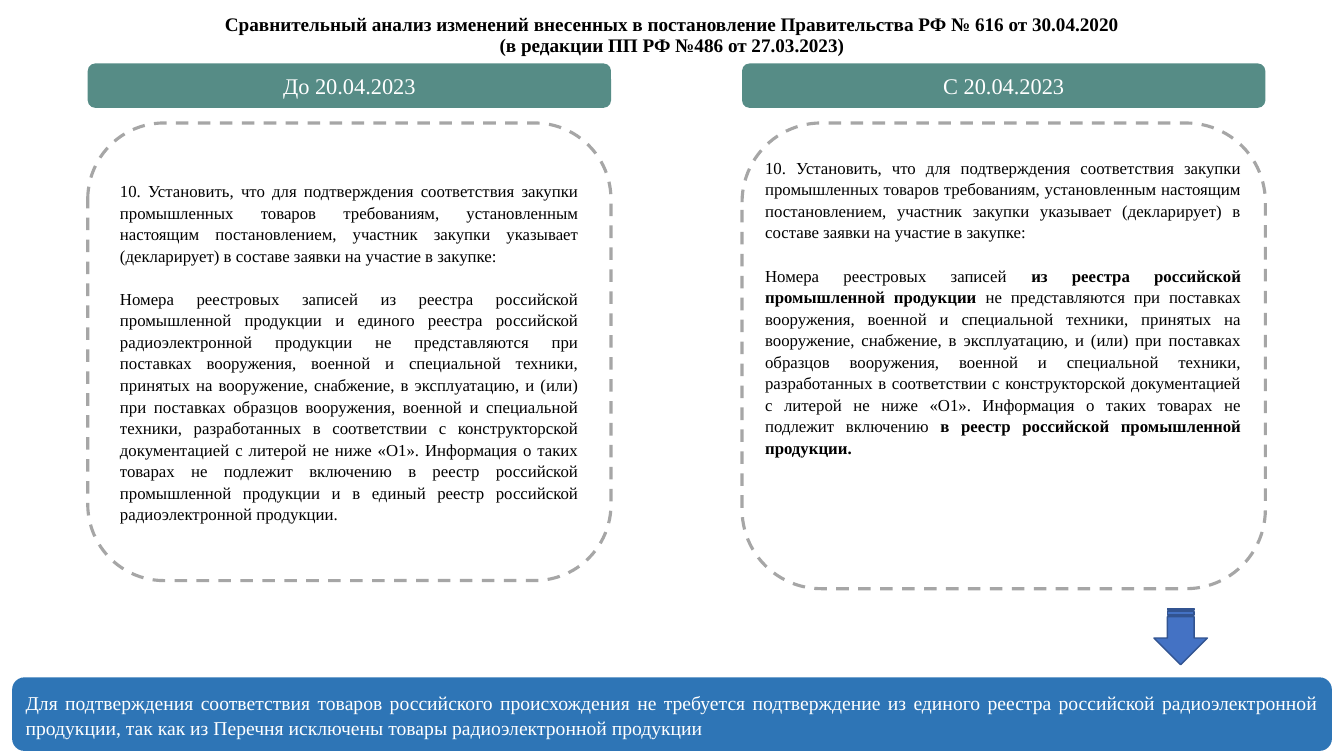
from pptx import Presentation
from pptx.dml.color import RGBColor
from pptx.enum.dml import MSO_LINE
from pptx.enum.shapes import MSO_SHAPE
from pptx.enum.text import MSO_ANCHOR, PP_ALIGN
from pptx.util import Inches, Pt

ROUNDED = MSO_SHAPE.ROUNDED_RECTANGLE
STRIPED_ARROW = MSO_SHAPE.STRIPED_RIGHT_ARROW
DASH = MSO_LINE.DASH
TOP, MIDDLE, BOTTOM = MSO_ANCHOR.TOP, MSO_ANCHOR.MIDDLE, MSO_ANCHOR.BOTTOM
CENTER, JUSTIFY = PP_ALIGN.CENTER, PP_ALIGN.JUSTIFY

COLORS = {
    "text": "000000",
    "light": "FFFFFF",
    "header": "568C86",
    "frame": "A6A6A6",
    "conclusion": "2E75B6",
    "arrow": "4472C4",
    "arrow_edge": "325491",
}

BEFORE_LEFT, AFTER_LEFT, COLUMN_WIDTH = 0.87, 7.36, 5.19
HEADER_TOP, HEADER_HEIGHT, PANEL_TOP = 0.63, 0.44, 1.22

TITLE = [
    "Сравнительный анализ изменений внесенных в постановление Правительства РФ № 616 от 30.04.2020",
    "(в редакции ПП РФ №486 от 27.03.2023)",
]
INTRO = (
    "10. Установить, что для подтверждения соответствия закупки промышленных товаров "
    "требованиям, установленным настоящим постановлением, участник закупки указывает "
    "(декларирует) в составе заявки на участие в закупке:"
)
EXEMPTION = (
    " не представляются при поставках вооружения, военной и специальной техники, "
    "принятых на вооружение, снабжение, в эксплуатацию, и (или) при поставках образцов "
    "вооружения, военной и специальной техники, разработанных в соответствии с "
    "конструкторской документацией с литерой не ниже «О1». Информация о таких товарах "
    "не подлежит включению "
)
RULE_BEFORE = (
    "Номера реестровых записей из реестра российской промышленной продукции и единого "
    "реестра российской радиоэлектронной продукции" + EXEMPTION +
    "в реестр российской промышленной продукции и в единый реестр российской "
    "радиоэлектронной продукции."
)
RULE_AFTER = [
    ("Номера реестровых записей ", False),
    ("из реестра российской промышленной продукции", True),
    (EXEMPTION, False),
    ("в реестр российской промышленной продукции.", True),
]
CONCLUSION = (
    "Для подтверждения соответствия товаров российского происхождения не требуется "
    "подтверждение из единого реестра российской радиоэлектронной продукции, так как из "
    "Перечня исключены товары радиоэлектронной продукции"
)


def write_text(frame, paragraphs, size=12, color="text", bold=False, align=JUSTIFY,
               anchor=MIDDLE, spacing=1.07, gap=0, font="Times New Roman"):
    frame.word_wrap = True
    frame.vertical_anchor = anchor
    for index, content in enumerate(paragraphs):
        paragraph = frame.add_paragraph() if index else frame.paragraphs[0]
        paragraph.alignment = align
        paragraph.line_spacing = spacing
        paragraph.space_before = Pt(gap if index else 0)
        segments = [(content, bold)] if isinstance(content, str) else content
        for words, is_bold in segments:
            run = paragraph.add_run()
            run.text = words
            run.font.name = font
            run.font.size = Pt(size)
            run.font.bold = is_bold
            run.font.color.rgb = RGBColor.from_string(COLORS[color])


class ComparisonSlide:
    def __init__(self, presentation):
        self.colors = {name: RGBColor.from_string(code) for name, code in COLORS.items()}
        self.shapes = presentation.slides.add_slide(presentation.slide_layouts[6]).shapes

    def block(self, kind, box, fill=None, line=None, line_width=1):
        block = self.shapes.add_shape(kind, *map(Inches, box))
        block.shadow.inherit = False
        if fill:
            block.fill.solid()
            block.fill.fore_color.rgb = self.colors[fill]
        else:
            block.fill.background()
        if line:
            block.line.color.rgb = self.colors[line]
            block.line.width = Pt(line_width)
        else:
            block.line.fill.background()
        return block

    def panel(self, left, height):
        panel = self.block(ROUNDED, (left, PANEL_TOP, COLUMN_WIDTH, height),
                           line="frame", line_width=2.25)
        panel.line.dash_style = DASH
        return panel

    def header(self, left, caption):
        header = self.block(ROUNDED, (left, HEADER_TOP, COLUMN_WIDTH, HEADER_HEIGHT),
                            fill="header")
        write_text(header.text_frame, [caption], size=16, color="light",
                   align=CENTER, spacing=1)

    def conclusion(self, box, statement):
        banner = self.block(ROUNDED, box, fill="conclusion")
        write_text(banner.text_frame, [statement], size=14, color="light")

    def down_arrow(self, box):
        arrow = self.block(STRIPED_ARROW, box, fill="arrow", line="arrow_edge")
        arrow.rotation = 90

    def text(self, box, paragraphs, **style):
        label = self.shapes.add_textbox(*map(Inches, box))
        write_text(label.text_frame, paragraphs, **style)


def main():
    presentation = Presentation()
    presentation.slide_width = Inches(13.33)
    presentation.slide_height = Inches(7.5)
    slide = ComparisonSlide(presentation)

    panel_before = slide.panel(BEFORE_LEFT, 4.54)
    write_text(panel_before.text_frame, [INTRO, RULE_BEFORE], gap=15.4)
    panel_after = slide.panel(AFTER_LEFT, 4.62)
    panel_after.adjustments[0] = 0.17

    slide.header(BEFORE_LEFT, "До 20.04.2023")
    slide.header(AFTER_LEFT, "С 20.04.2023")
    slide.conclusion((0.12, 6.72, 13.09, 0.73), CONCLUSION)
    slide.down_arrow((11.43, 6.05, 0.56, 0.53))
    slide.text((0.33, 0, 12.67, 0.61), TITLE, size=13.7, bold=True,
               align=CENTER, anchor=BOTTOM, spacing=0.9)
    slide.text((7.49, 1.5, 4.92, 3.28), [INTRO, RULE_AFTER], anchor=TOP, gap=15.4)

    presentation.save("out.pptx")


if __name__ == "__main__":
    main()
